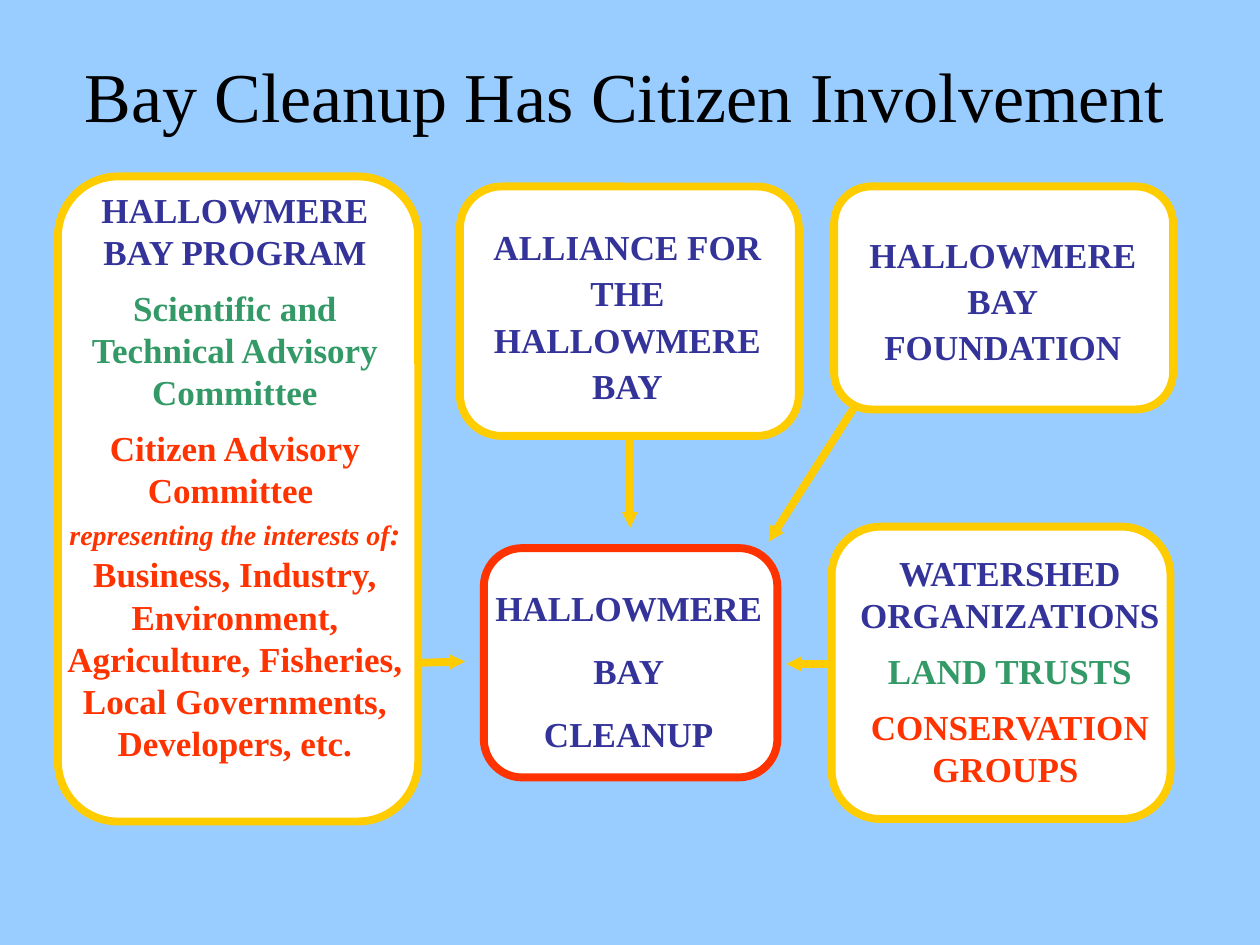
from lxml import etree
from pptx import Presentation
from pptx.dml.color import RGBColor
from pptx.enum.shapes import MSO_CONNECTOR, MSO_SHAPE
from pptx.enum.text import MSO_ANCHOR, PP_ALIGN
from pptx.oxml.ns import qn
from pptx.util import Inches, Pt

ROUNDED = MSO_SHAPE.ROUNDED_RECTANGLE
STRAIGHT = MSO_CONNECTOR.STRAIGHT
CENTER = PP_ALIGN.CENTER
TOP = MSO_ANCHOR.TOP
MIDDLE = MSO_ANCHOR.MIDDLE

FONT = "Times New Roman"
LINE_WIDTH = Pt(4.5)
SKY = RGBColor(0x99, 0xCC, 0xFF)
WHITE = RGBColor(0xFF, 0xFF, 0xFF)
BLACK = RGBColor(0, 0, 0)
GOLD = RGBColor(0xFF, 0xCC, 0x00)
RED = RGBColor(0xFF, 0x33, 0x00)
GREEN = RGBColor(0x33, 0x99, 0x66)
NAVY = RGBColor(0x33, 0x33, 0x99)


def add_span(para, text, size=20, color=NAVY, bold=True, italic=False):
    """Add formatted text to a paragraph, turning newlines into line breaks."""
    for number, line in enumerate(text.split("\n")):
        if number:
            para.add_line_break()
        if line:
            span = para.add_run()
            span.text = line
            span.font.name = FONT
            span.font.size = Pt(size)
            span.font.bold = bold
            span.font.italic = italic
            span.font.color.rgb = color


def add_text(page, place, paragraphs, spacing=1.0, after=0, anchor=TOP):
    """Add a wrapped text box; each paragraph is a list of (text, format) pairs."""
    box = page.shapes.add_textbox(*map(Inches, place))
    frame = box.text_frame
    frame.word_wrap = True
    frame.vertical_anchor = anchor
    for number, spans in enumerate(paragraphs):
        para = frame.add_paragraph() if number else frame.paragraphs[0]
        para.alignment = CENTER
        para.line_spacing = spacing
        para.space_after = Pt(after)
        for text, style in spans:
            add_span(para, text, **style)


def add_panel(page, place, color=GOLD):
    """Add a white rounded panel with a thick outline."""
    panel = page.shapes.add_shape(ROUNDED, *map(Inches, place))
    panel.adjustments[0] = 0.167
    panel.shadow.inherit = False
    panel.fill.solid()
    panel.fill.fore_color.rgb = WHITE
    panel.line.color.rgb = color
    panel.line.width = LINE_WIDTH
    return panel


def add_arrow(page, start, end):
    """Add a gold arrow between two points."""
    arrow = page.shapes.add_connector(STRAIGHT, *map(Inches, start + end))
    arrow.line.color.rgb = GOLD
    arrow.line.width = LINE_WIDTH
    outline = arrow._element.spPr.find(qn("a:ln"))
    etree.SubElement(outline, qn("a:tailEnd"), type="triangle", w="sm", len="sm")
    etree.SubElement(arrow._element.spPr, qn("a:effectLst"))
    return arrow


def plain(*lines):
    """Turn lines into paragraphs in the default format."""
    return [[(line, {})] for line in lines]


def main():
    """Build and save the slide."""
    deck = Presentation()
    deck.slide_width, deck.slide_height = Inches(10), Inches(7.5)
    page = deck.slides.add_slide(deck.slide_layouts[6])
    page.background.fill.solid()
    page.background.fill.fore_color.rgb = SKY

    title = ("Bay Cleanup Has Citizen Involvement",
             dict(size=40, color=BLACK, bold=False))
    add_text(page, (0.33, 0, 9.25, 1.5), [[title]], anchor=MIDDLE)

    add_panel(page, (0.46, 1.4, 2.86, 5.12))
    alliance = add_panel(page, (3.65, 1.48, 2.69, 1.98))
    add_panel(page, (6.62, 1.48, 2.69, 1.77))
    add_panel(page, (6.6, 4.18, 2.69, 2.32))
    add_panel(page, (3.84, 4.35, 2.33, 1.82), RED)

    add_text(page, (0.43, 1.45, 2.87, 4.7), [
        [("HALLOWMERE\nBAY PROGRAM", {})],
        [("Scientific and Technical Advisory Committee", dict(color=GREEN))],
        [("Citizen Advisory Committee \n", dict(color=RED)),
         ("representing the interests of", dict(size=16, color=RED, italic=True)),
         (":", dict(size=18, color=RED, italic=True)),
         (" Business, Industry, Environment, Agriculture, Fisheries, "
          "Local Governments, Developers, etc.", dict(color=RED))],
    ], after=8)
    add_text(page, (3.74, 4.44, 2.5, 1.6),
             plain("HALLOWMERE", "BAY", "CLEANUP"), spacing=1.5)
    add_text(page, (3.73, 1.71, 2.5, 1.57),
             plain("ALLIANCE FOR THE HALLOWMERE BAY"), spacing=1.1)
    add_text(page, (6.71, 1.77, 2.5, 1.2),
             plain("HALLOWMERE", "BAY", "FOUNDATION"), spacing=1.1)
    add_text(page, (6.66, 4.33, 2.71, 2.03), [
        [("WATERSHED ORGANIZATIONS", {})],
        [("LAND TRUSTS", dict(color=GREEN))],
        [("CONSERVATION GROUPS ", dict(color=RED))],
    ], after=8)

    add_arrow(page, (6.8, 3.2), (6.1, 4.3))
    add_arrow(page, (5, 3.46), (5, 4.19)).begin_connect(alliance, 2)
    add_arrow(page, (6.59, 5.27), (6.24, 5.27))
    add_arrow(page, (3.34, 5.26), (3.69, 5.25))

    deck.save("out.pptx")


if __name__ == "__main__":
    main()
